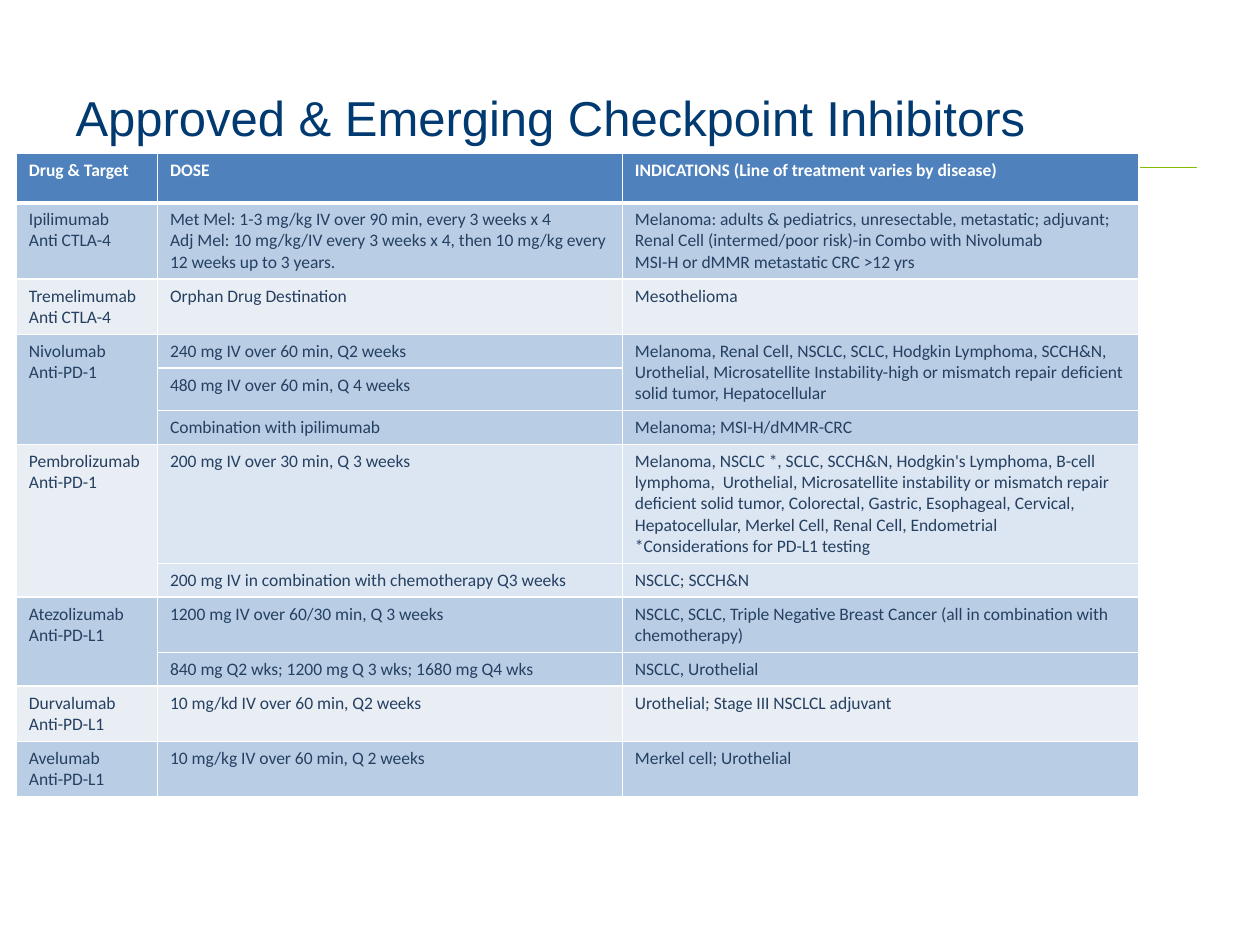
from lxml import etree
from pptx import Presentation
from pptx.dml.color import RGBColor
from pptx.enum.shapes import MSO_CONNECTOR
from pptx.enum.text import MSO_ANCHOR, PP_ALIGN
from pptx.oxml.ns import qn
from pptx.util import Inches, Pt

STRAIGHT = MSO_CONNECTOR.STRAIGHT
MIDDLE = MSO_ANCHOR.MIDDLE
LEFT = PP_ALIGN.LEFT

NAVY = RGBColor(0x00, 0x3A, 0x70)
GREEN = RGBColor(0x84, 0xBD, 0x00)
WHITE = RGBColor(0xFF, 0xFF, 0xFF)
INK = RGBColor(0x25, 0x40, 0x61)
HEADER = RGBColor(0x4F, 0x81, 0xBD)
BLUE = RGBColor(0xB9, 0xCD, 0xE5)
PALE = RGBColor(0xE9, 0xED, 0xF4)
LIGHT = RGBColor(0xDC, 0xE6, 0xF2)

WIDTH, HEIGHT = 10, 7.5
MARGIN = 0.05 * WIDTH
TABLE_LEFT, TABLE_TOP = 0.13, 1.22
COLUMNS = [1.12, 3.69, 4.1]

HEADINGS = ["Drug & Target", "DOSE", "INDICATIONS (Line of treatment varies by disease)"]

# Row height, fill of the drug cell, fill of the other cells, texts;
# None continues the cell above
ROWS = [
    (0.58, BLUE, BLUE, [
        "Ipilimumab\nAnti CTLA-4",
        "Met Mel: 1-3 mg/kg IV over 90 min, every 3 weeks x 4\n"
        "Adj Mel: 10 mg/kg/IV every 3 weeks x 4, then 10 mg/kg every 12 weeks up to 3 years.",
        "Melanoma: adults & pediatrics, unresectable, metastatic; adjuvant; "
        "Renal Cell (intermed/poor risk)-in Combo with Nivolumab\n"
        "MSI-H or dMMR metastatic CRC >12 yrs"]),
    (0.42, PALE, PALE, [
        "Tremelimumab\nAnti CTLA-4", "Orphan Drug Destination", "Mesothelioma"]),
    (0.26, BLUE, BLUE, [
        "Nivolumab\nAnti-PD-1",
        "240 mg IV over 60 min, Q2 weeks",
        "Melanoma, Renal Cell, NSCLC, SCLC, Hodgkin Lymphoma, SCCH&N, Urothelial, "
        "Microsatellite Instability-high or mismatch repair deficient solid tumor, "
        "Hepatocellular"]),
    (0.32, BLUE, BLUE, [None, "480 mg IV over 60 min, Q 4 weeks", None]),
    (0.26, BLUE, BLUE, [None, "Combination with ipilimumab", "Melanoma; MSI-H/dMMR-CRC"]),
    (0.91, PALE, LIGHT, [
        "Pembrolizumab\nAnti-PD-1",
        "200 mg IV over 30 min, Q 3 weeks",
        "Melanoma, NSCLC *, SCLC, SCCH&N, Hodgkin's Lymphoma, B-cell lymphoma,  Urothelial, "
        "Microsatellite instability or mismatch repair deficient solid tumor, Colorectal, "
        "Gastric, Esophageal, Cervical, Hepatocellular, Merkel Cell, Renal Cell, Endometrial\n"
        "*Considerations for PD-L1 testing"]),
    (0.26, PALE, LIGHT, [
        None, "200 mg IV in combination with chemotherapy Q3 weeks", "NSCLC; SCCH&N"]),
    (0.42, BLUE, BLUE, [
        "Atezolizumab\nAnti-PD-L1",
        "1200 mg IV over 60/30 min, Q 3 weeks",
        "NSCLC, SCLC, Triple Negative Breast Cancer (all in combination with chemotherapy)"]),
    (0.26, BLUE, BLUE, [
        None, "840 mg Q2 wks; 1200 mg Q 3 wks; 1680 mg Q4 wks", "NSCLC, Urothelial"]),
    (0.42, PALE, PALE, [
        "Durvalumab\nAnti-PD-L1",
        "10 mg/kd IV over 60 min, Q2 weeks",
        "Urothelial; Stage III NSCLCL adjuvant"]),
    (0.42, BLUE, BLUE, [
        "Avelumab\nAnti-PD-L1", "10 mg/kg IV over 60 min, Q 2 weeks", "Merkel cell; Urothelial"]),
]


def add_rule(page):
    """Draw the thin rule under the title."""
    y = Inches(1.33)
    rule = page.shapes.add_connector(STRAIGHT, Inches(MARGIN), y, Inches(WIDTH - MARGIN), y)
    rule.line.color.rgb = GREEN
    rule.line.width = Pt(0.75)
    etree.SubElement(rule._element.spPr, qn("a:effectLst"))


def set_title(page, text):
    title = page.shapes.title
    title.left, title.top = Inches(MARGIN), Inches(0.04 * HEIGHT)
    title.width, title.height = Inches(WIDTH - 2 * MARGIN), Inches(HEIGHT / 6)
    frame = title.text_frame
    frame.text = text
    frame.vertical_anchor = MIDDLE
    para = frame.paragraphs[0]
    para.alignment = LEFT
    font = para.runs[0].font
    font.name, font.size, font.color.rgb = "Arial", Pt(28), NAVY


def set_borders(cell, bottom):
    """Give a cell white borders; they must come before its fill."""
    properties = cell._tc.get_or_add_tcPr()
    for side, points in (("lnL", 1), ("lnR", 1), ("lnT", 1), ("lnB", bottom)):
        line = etree.SubElement(properties, qn("a:" + side), w=str(Pt(points)))
        fill = etree.SubElement(line, qn("a:solidFill"))
        etree.SubElement(fill, qn("a:srgbClr"), val=str(WHITE))


def style_cell(cell, text, fill, color, bold=False, bottom=1):
    set_borders(cell, bottom)
    cell.fill.solid()
    cell.fill.fore_color.rgb = fill
    if text is None:
        return
    cell.text_frame.text = text
    for para in cell.text_frame.paragraphs:
        for span in para.runs:
            font = span.font
            font.name, font.size, font.bold = "Calibri", Pt(10), bold
            font.color.rgb = color


def merge_continued(table, column):
    """Merge each cell with the None entries below it."""
    start = 0
    for index in range(1, len(ROWS) + 1):
        if index == len(ROWS) or ROWS[index][3][column] is not None:
            if index - start > 1:
                table.cell(start + 1, column).merge(table.cell(index, column))
            start = index


def add_drug_table(page):
    heights = [0.39] + [row[0] for row in ROWS]
    table = page.shapes.add_table(
        len(heights), len(COLUMNS), Inches(TABLE_LEFT), Inches(TABLE_TOP),
        Inches(sum(COLUMNS)), Inches(sum(heights))).table
    for row, height in zip(table.rows, heights):
        row.height = Inches(height)
    for index, width in enumerate(COLUMNS):
        table.columns[index].width = Inches(width)
        merge_continued(table, index)
        style_cell(table.cell(0, index), HEADINGS[index], HEADER, WHITE, bold=True, bottom=3)
    for number, (_, drug_fill, fill, texts) in enumerate(ROWS, start=1):
        for index, text in enumerate(texts):
            style_cell(table.cell(number, index), text, fill if index else drug_fill, INK)


def main():
    deck = Presentation()
    deck.slide_width, deck.slide_height = Inches(WIDTH), Inches(HEIGHT)
    page = deck.slides.add_slide(deck.slide_layouts[5])
    add_rule(page)
    set_title(page, "Approved & Emerging Checkpoint Inhibitors")
    add_drug_table(page)
    deck.save("out.pptx")


if __name__ == "__main__":
    main()
